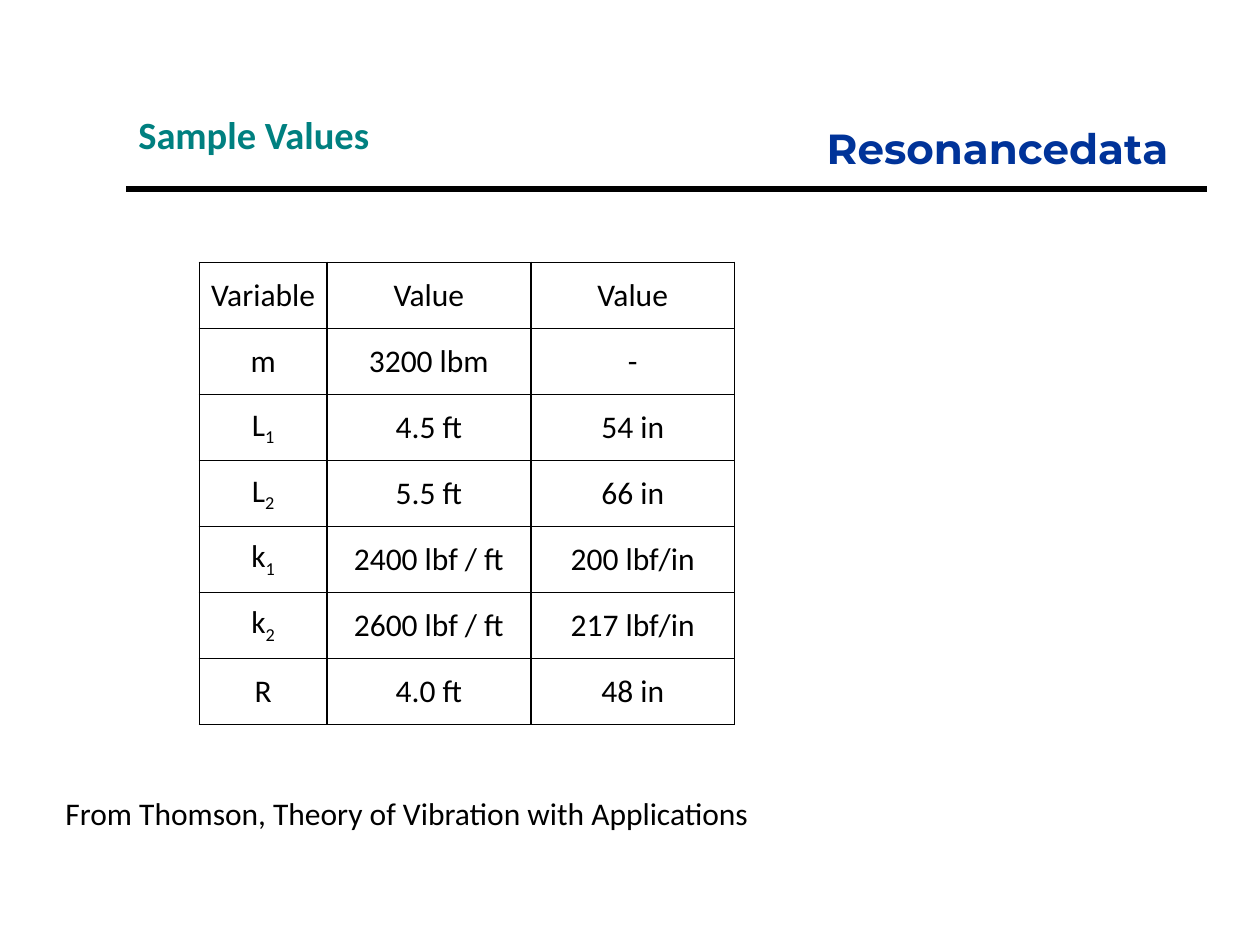
from dataclasses import dataclass

from lxml import etree
from pptx import Presentation
from pptx.dml.color import RGBColor
from pptx.enum.shapes import MSO_CONNECTOR
from pptx.enum.text import MSO_ANCHOR, MSO_AUTO_SIZE, PP_ALIGN
from pptx.oxml.ns import qn
from pptx.slide import Slide
from pptx.util import Cm, Pt

LEFT, CENTER, RIGHT = PP_ALIGN.LEFT, PP_ALIGN.CENTER, PP_ALIGN.RIGHT
MIDDLE = MSO_ANCHOR.MIDDLE
FIT_SHAPE = MSO_AUTO_SIZE.SHAPE_TO_FIT_TEXT
STRAIGHT = MSO_CONNECTOR.STRAIGHT
BLANK_LAYOUT = 6
BLACK, TEAL, NAVY = "000000", "008080", "003399"

COLUMN_WIDTHS = (2.57, 4.11, 4.11)
ROW_HEIGHT = 1.33
CELL_FORMAT = {
    "vertical_anchor": MIDDLE,
    "margin_left": Cm(0.18),
    "margin_right": Cm(0.18),
    "margin_top": 0,
    "margin_bottom": 0,
}
# An underscore marks the start of a subscript.
SAMPLE_VALUES = (
    ("Variable", "Value", "Value"),
    ("m", "3200 lbm", "-"),
    ("L_1", "4.5 ft", "54 in"),
    ("L_2", "5.5 ft", "66 in"),
    ("k_1", "2400 lbf / ft", "200 lbf/in"),
    ("k_2", "2600 lbf / ft", "217 lbf/in"),
    ("R", "4.0 ft", "48 in"),
)


@dataclass(frozen=True)
class TextStyle:
    size: float = 18
    color: str = BLACK
    font: str = "Calibri"
    bold: bool = False
    align: PP_ALIGN = LEFT


@dataclass(frozen=True)
class Label:
    """A text box, measured in centimetres."""
    text: str
    left: float
    top: float
    width: float
    height: float
    style: TextStyle


LABELS = (
    Label("Sample Values", 2.54, 2.11, 12.27, 1.19, TextStyle(22, TEAL, bold=True)),
    Label("Resonancedata", 6.99, 2.34, 16.81, 2.29,
          TextStyle(24, NAVY, "Montserrat", True, RIGHT)),
    Label("From Thomson, Theory of Vibration with Applications",
          1.07, 15.88, 20.32, 1.02, TextStyle()),
)


def rgb(color: str) -> RGBColor:
    return RGBColor.from_string(color)


def write_text(paragraph, text: str, style: TextStyle) -> None:
    """Write text in one style, lowering the part after an underscore."""
    paragraph.alignment = style.align
    base, _, subscript = text.partition("_")
    for part, offset in ((base, None), (subscript, "-25000")):
        if not part:
            continue
        run = paragraph.add_run()
        run.text = part
        font_format = {"size": Pt(style.size), "name": style.font, "bold": style.bold}
        for name, value in font_format.items():
            setattr(run.font, name, value)
        run.font.color.rgb = rgb(style.color)
        if offset:
            run.font._element.set("baseline", offset)


def add_label(slide: Slide, label: Label) -> None:
    position = (label.left, label.top, label.width, label.height)
    shape = slide.shapes.add_textbox(*map(Cm, position))
    frame = shape.text_frame
    frame.word_wrap = True
    frame.auto_size = FIT_SHAPE
    write_text(frame.paragraphs[0], label.text, label.style)


def add_title_rule(slide: Slide) -> None:
    rule = slide.shapes.add_connector(STRAIGHT, Cm(2.54), Cm(3.81), Cm(24.33), Cm(3.81))
    rule.line.color.rgb = rgb(BLACK)
    rule.line.width = Pt(3)
    etree.SubElement(rule._element.spPr, qn("a:effectLst"))


def add_borders(cell, color: str, width: int) -> None:
    properties = cell._tc.get_or_add_tcPr()
    for index, side in enumerate(("lnL", "lnR", "lnT", "lnB")):
        line = etree.Element(qn(f"a:{side}"), w=str(width))
        fill = etree.SubElement(line, qn("a:solidFill"))
        etree.SubElement(fill, qn("a:srgbClr"), val=color)
        properties.insert(index, line)


def add_value_table(slide: Slide) -> None:
    row_count, column_count = len(SAMPLE_VALUES), len(COLUMN_WIDTHS)
    table = slide.shapes.add_table(
        row_count, column_count, Cm(4.02), Cm(5.29),
        Cm(sum(COLUMN_WIDTHS)), Cm(ROW_HEIGHT * row_count),
    ).table
    table.first_row = table.horz_banding = False
    for column, width in zip(table.columns, COLUMN_WIDTHS):
        column.width = Cm(width)
    style = TextStyle(align=CENTER)
    for row, texts in zip(table.rows, SAMPLE_VALUES):
        row.height = Cm(ROW_HEIGHT)
        for cell, text in zip(row.cells, texts):
            for name, value in CELL_FORMAT.items():
                setattr(cell, name, value)
            cell.fill.background()
            add_borders(cell, BLACK, Pt(1))
            write_text(cell.text_frame.paragraphs[0], text, style)


def main() -> None:
    presentation = Presentation()
    presentation.slide_width, presentation.slide_height = Cm(25.4), Cm(19.05)
    slide = presentation.slides.add_slide(presentation.slide_layouts[BLANK_LAYOUT])
    title, brand, source = LABELS
    add_label(slide, title)
    add_label(slide, brand)
    add_title_rule(slide)
    add_value_table(slide)
    add_label(slide, source)
    presentation.save("out.pptx")


if __name__ == "__main__":
    main()
